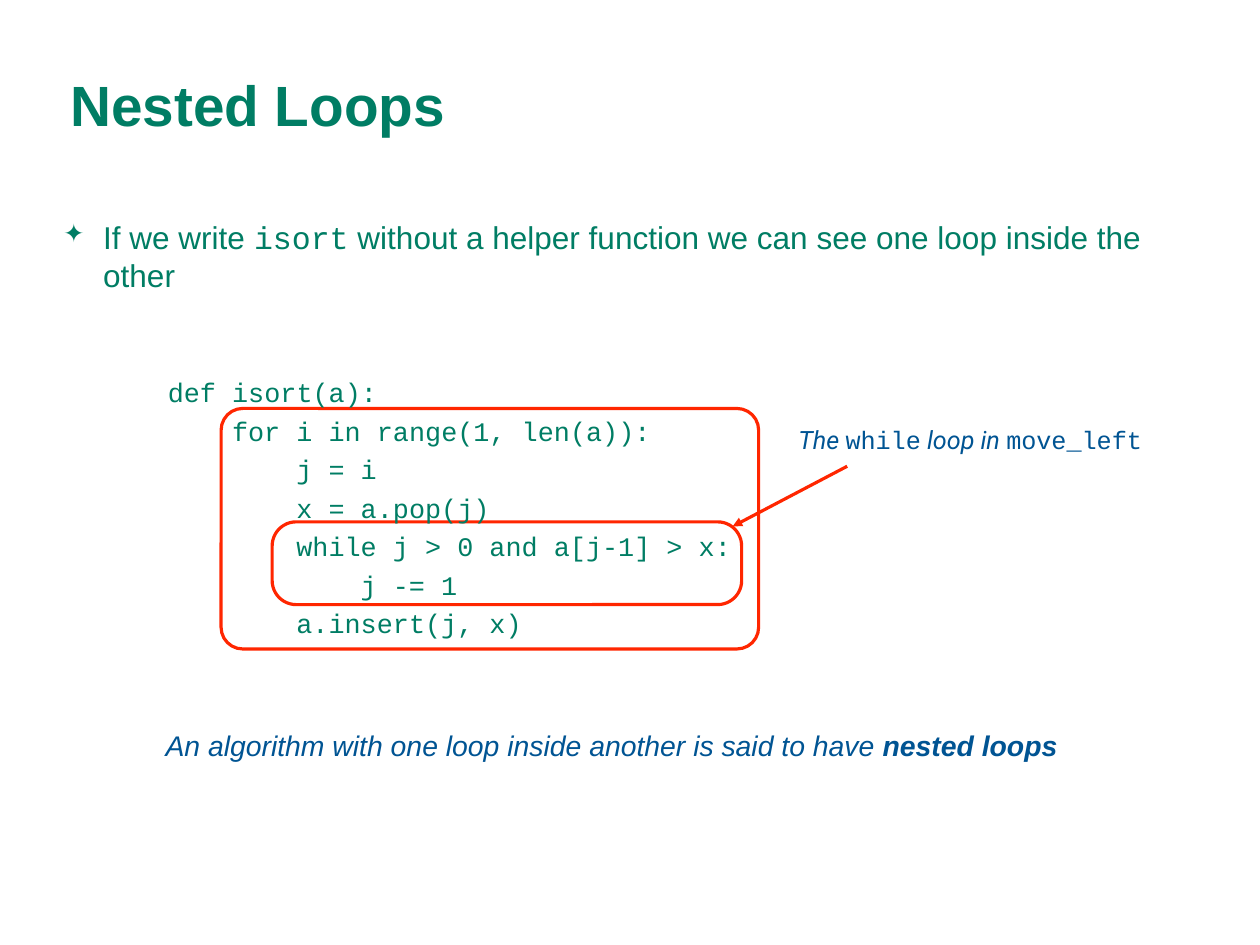
from dataclasses import dataclass
from typing import Optional

from lxml import etree
from pptx import Presentation
from pptx.dml.color import RGBColor
from pptx.enum.shapes import MSO_CONNECTOR, MSO_SHAPE
from pptx.enum.text import MSO_ANCHOR, MSO_AUTO_SIZE
from pptx.oxml.ns import qn
from pptx.util import Inches, Pt

ROUNDED = MSO_SHAPE.ROUNDED_RECTANGLE
STRAIGHT = MSO_CONNECTOR.STRAIGHT
TOP, MIDDLE = MSO_ANCHOR.TOP, MSO_ANCHOR.MIDDLE
GROW, FIXED = MSO_AUTO_SIZE.SHAPE_TO_FIT_TEXT, MSO_AUTO_SIZE.NONE

COLORS = {"green": "007D64", "blue": "005493", "red": "FF2600"}
SANS, MONO, NOTE = "Arial", "Courier New", "Roboto"
WIDTH, HEIGHT = Inches(11.11), Inches(8.33)
CODE_SIZE = 17
CODE_INDENT = Pt(4 * 0.6 * CODE_SIZE)  # four characters of the fixed-width font


@dataclass
class Box:
    """Place and size in percent of the slide's width and height."""
    left: float
    top: float
    width: float
    height: float

    def emu(self) -> tuple[int, int, int, int]:
        return (across(self.left), down(self.top),
                across(self.width), down(self.height))


@dataclass
class Piece:
    text: str
    font: Optional[str] = None
    bold: Optional[bool] = None
    italic: Optional[bool] = None


@dataclass
class Line:
    pieces: list[Piece]
    level: int = 0
    bullet: Optional[str] = None


@dataclass
class TextBlock:
    box: Box
    lines: list[Line]
    size: int
    color: str
    font: Optional[str] = SANS
    bold: Optional[bool] = None
    italic: Optional[bool] = None
    inset: float = 0.06
    anchor: MSO_ANCHOR = MIDDLE
    fit: MSO_AUTO_SIZE = GROW
    spacing: float = 1.0


@dataclass
class LoopFrame:
    box: Box
    rounding: float


def across(percent: float) -> int:
    return round(WIDTH * percent / 100)


def down(percent: float) -> int:
    return round(HEIGHT * percent / 100)


def color(name: str) -> RGBColor:
    return RGBColor.from_string(COLORS[name])


def add_bullet(paragraph, mark: str) -> None:
    properties = paragraph._p.get_or_add_pPr()
    properties.set("marL", str(Inches(0.35)))
    properties.set("indent", str(-Inches(0.35)))
    etree.SubElement(properties, qn("a:buSzPct"), val="80000")
    etree.SubElement(properties, qn("a:buChar"), char=mark)
    paragraph.space_before = Pt(12)


def draw_text(slide, block: TextBlock) -> None:
    frame = slide.shapes.add_textbox(*block.box.emu()).text_frame
    frame.word_wrap = True
    frame.auto_size = block.fit
    frame.vertical_anchor = block.anchor
    frame.margin_left = frame.margin_right = Inches(block.inset)
    frame.margin_top = frame.margin_bottom = Inches(block.inset)
    for number, line in enumerate(block.lines):
        paragraph = frame.add_paragraph() if number else frame.paragraphs[0]
        if line.bullet:
            add_bullet(paragraph, line.bullet)
        if line.level:
            margin = CODE_INDENT * line.level
            paragraph._p.get_or_add_pPr().set("marL", str(margin))
        paragraph.line_spacing = block.spacing
        paragraph.font.size = Pt(block.size)
        paragraph.font.color.rgb = color(block.color)
        paragraph.font.name = block.font
        paragraph.font.bold = block.bold
        paragraph.font.italic = block.italic
        for piece in line.pieces:
            run = paragraph.add_run()
            run.text = piece.text
            if piece.font:
                run.font.name = piece.font
            if piece.bold is not None:
                run.font.bold = piece.bold
            if piece.italic is not None:
                run.font.italic = piece.italic


def draw_frame(slide, loop: LoopFrame) -> None:
    outline = slide.shapes.add_shape(ROUNDED, *loop.box.emu())
    outline.adjustments[0] = loop.rounding
    outline.shadow.inherit = False
    outline.fill.background()
    outline.line.color.rgb = color("red")
    outline.line.width = Pt(2)


def draw_arrow(slide, start: tuple[float, float], tip: tuple[float, float]) -> None:
    arrow = slide.shapes.add_connector(STRAIGHT, across(start[0]), down(start[1]),
                                       across(tip[0]), down(tip[1]))
    arrow.line.color.rgb = color("red")
    arrow.line.width = Pt(2)
    etree.SubElement(arrow.line._get_or_add_ln(), qn("a:tailEnd"), type="triangle")
    etree.SubElement(arrow._element.spPr, qn("a:effectLst"))


TITLE = TextBlock(Box(5.04, 2.64, 87.49, 16.69), [Line([Piece("Nested Loops")])],
                  36, "green", bold=True, fit=FIXED)
INTRO = TextBlock(
    Box(5.04, 23.05, 87.49, 69.87),
    [Line([Piece("If we write ", SANS), Piece("isort", MONO),
           Piece(" without a helper function we can see one loop inside the other",
                 SANS)], bullet="✦")],
    20, "green", font=None, inset=0, anchor=TOP, fit=FIXED)
CONCLUSION = TextBlock(
    Box(12.6, 76.35, 74.89, 5.04),
    [Line([Piece("An algorithm with one loop inside another is said to have "),
           Piece("nested loops", bold=True)])],
    18, "blue", italic=True)
WHILE_NOTE = TextBlock(
    Box(62.83, 44.18, 32.4, 4.56),
    [Line([Piece("The ", NOTE, italic=True), Piece("while", MONO, italic=False),
           Piece(" loop in ", NOTE, italic=True),
           Piece("move_left", MONO, italic=False)])],
    16, "blue", font=None)
CODE_LINES = [
    (0, "def isort(a):"),
    (1, "for i in range(1, len(a)):"),
    (2, "j = i"),
    (2, "x = a.pop(j)"),
    (2, "while j > 0 and a[j-1] > x:"),
    (3, "j -= 1"),
    (2, "a.insert(j, x)"),
]
CODE = TextBlock(Box(12.78, 39.02, 52.03, 28.69),
                 [Line([Piece(text)], level) for level, text in CODE_LINES],
                 CODE_SIZE, "green", font=MONO, spacing=1.2)
FOR_LOOP = LoopFrame(Box(17.55, 43.22, 42.66, 25.45), 0.09)
WHILE_LOOP = LoopFrame(Box(21.6, 55.22, 37.26, 8.76), 0.29)


def main() -> None:
    deck = Presentation()
    deck.slide_width, deck.slide_height = WIDTH, HEIGHT
    slide = deck.slides.add_slide(deck.slide_layouts[6])

    # Heading, introduction and conclusion
    for block in (TITLE, INTRO, CONCLUSION):
        draw_text(slide, block)

    # Frames around the two loops
    for loop in (FOR_LOOP, WHILE_LOOP):
        draw_frame(slide, loop)

    # Arrow from the note to the inner loop
    draw_arrow(slide, start=(67.24, 49.34), tip=(58.15, 55.7))

    # Note and code listing
    for block in (WHILE_NOTE, CODE):
        draw_text(slide, block)

    deck.save("out.pptx")


if __name__ == "__main__":
    main()
